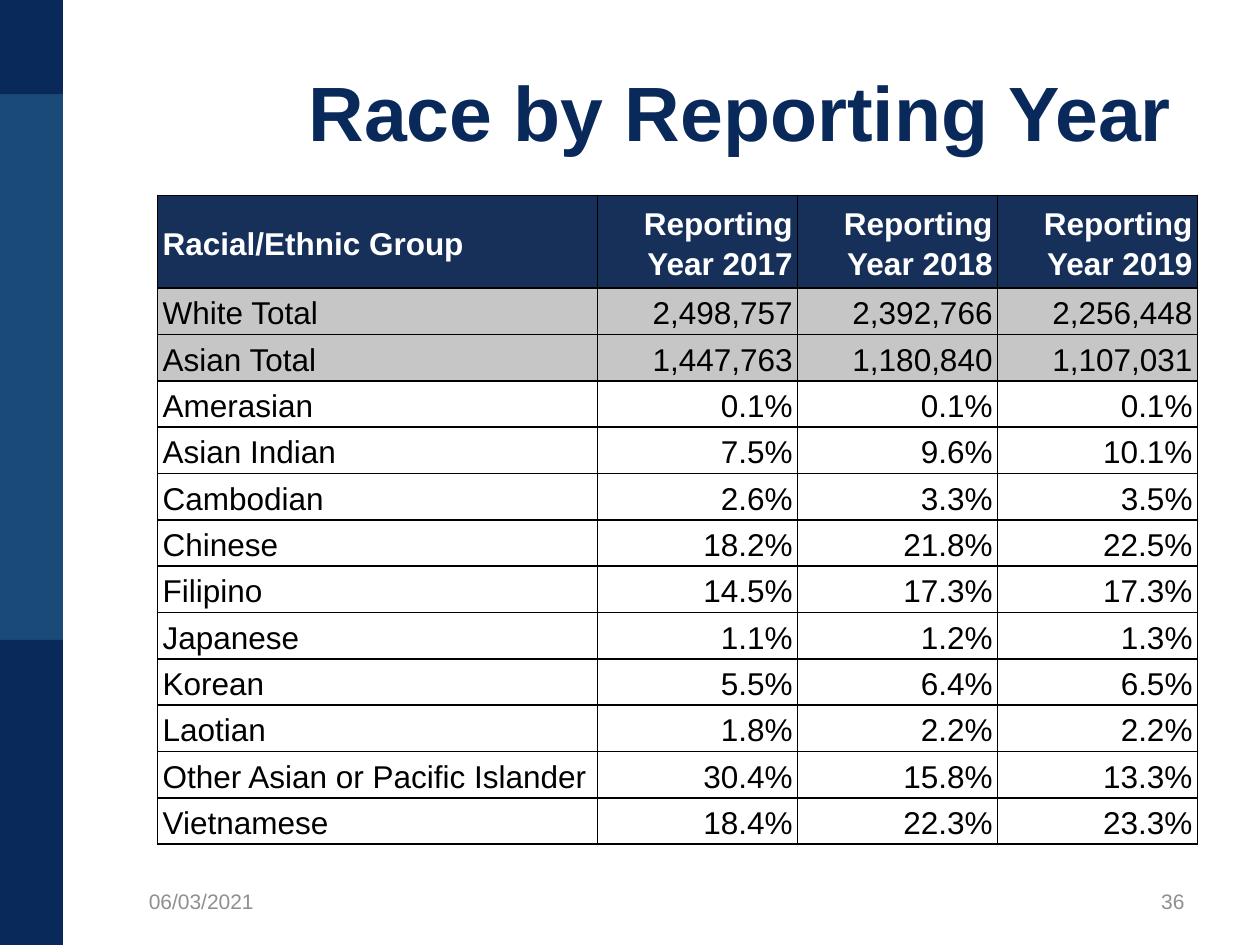
import dataclasses

import pptx
import pptx.util
import pptx.dml.color
import pptx.enum.shapes
import pptx.enum.text
from lxml import etree
from pptx.oxml.ns import qn

Cm = pptx.util.Cm
Pt = pptx.util.Pt
Align = pptx.enum.text.PP_ALIGN
Middle = pptx.enum.text.MSO_ANCHOR.MIDDLE


@dataclasses.dataclass(frozen=True)
class Theme:
    """Colours, font and type sizes of the slide."""
    font: str = "Arial"
    navy: str = "0A295B"
    blue: str = "1A4A78"
    head: str = "17305A"
    total: str = "C6C6C6"
    white: str = "FFFFFF"
    black: str = "000000"
    grey: str = "8F8F8F"
    title: int = 44
    body: int = 18
    small: int = 12


THEME = Theme()

ROWS = [
    ("Racial/Ethnic Group", "Reporting Year 2017", "Reporting Year 2018", "Reporting Year 2019"),
    ("White Total", "2,498,757", "2,392,766", "2,256,448"),
    ("Asian Total", "1,447,763", "1,180,840", "1,107,031"),
    ("Amerasian", "0.1%", "0.1%", "0.1%"),
    ("Asian Indian", "7.5%", "9.6%", "10.1%"),
    ("Cambodian", "2.6%", "3.3%", "3.5%"),
    ("Chinese", "18.2%", "21.8%", "22.5%"),
    ("Filipino", "14.5%", "17.3%", "17.3%"),
    ("Japanese", "1.1%", "1.2%", "1.3%"),
    ("Korean", "5.5%", "6.4%", "6.5%"),
    ("Laotian", "1.8%", "2.2%", "2.2%"),
    ("Other Asian or Pacific Islander", "30.4%", "15.8%", "13.3%"),
    ("Vietnamese", "18.4%", "22.3%", "23.3%"),
]


def tint(code):
    """Turn a hex code into a colour."""
    return pptx.dml.color.RGBColor.from_string(code)


def style(para, size, color, align, bold=False):
    """Set the font and alignment of a paragraph."""
    para.alignment = align
    font = para.font
    font.name = THEME.font
    font.size = Pt(size)
    font.bold = bold
    font.color.rgb = tint(color)


def add_band(slide, left, top, width, height):
    """Draw the side band with its dark ends."""
    parts = [(0, height, THEME.blue), (0, 1.9, THEME.navy), (12.9, height - 12.9, THEME.navy)]
    for drop, tall, color in parts:
        rect = slide.shapes.add_shape(
            pptx.enum.shapes.MSO_SHAPE.RECTANGLE,
            Cm(left), Cm(top + drop), Cm(width), Cm(tall))
        rect.shadow.inherit = False
        rect.fill.solid()
        rect.fill.fore_color.rgb = tint(color)
        rect.line.fill.background()


def add_title(slide, left, top, width, height):
    """Place and format the title."""
    title = slide.shapes.title
    title.left, title.top = Cm(left), Cm(top)
    title.width, title.height = Cm(width), Cm(height)
    frame = title.text_frame
    frame.text = "Race by Reporting Year"
    frame.vertical_anchor = Middle
    style(frame.paragraphs[0], THEME.title, THEME.navy, Align.CENTER, True)


def add_edges(cell):
    """Rule all four sides of a cell."""
    props = cell._tc.get_or_add_tcPr()
    for spot, side in enumerate(("lnL", "lnR", "lnT", "lnB")):
        line = etree.Element(qn("a:" + side), w=str(Pt(1)))
        fill = etree.SubElement(line, qn("a:solidFill"))
        etree.SubElement(fill, qn("a:srgbClr"), val=THEME.black)
        props.insert(spot, line)


def fill_cell(cell, text, row, col):
    """Write and format one cell by its row and column."""
    head = row == 0
    back = THEME.head if head else THEME.total if row < 3 else THEME.white
    cell.fill.solid()
    cell.fill.fore_color.rgb = tint(back)
    cell.margin_left = cell.margin_right = Cm(0.1)
    cell.margin_top = cell.margin_bottom = 0
    cell.vertical_anchor = Middle
    cell.text = text
    para = cell.text_frame.paragraphs[0]
    para.line_spacing = 1.15
    style(para, THEME.body, THEME.white if head else THEME.black,
          Align.RIGHT if col else Align.LEFT, head)
    add_edges(cell)


def add_grid(slide, left, top, width, height):
    """Build the table, with a header two rows tall."""
    count = len(ROWS[0])
    table = slide.shapes.add_table(
        len(ROWS), count, Cm(left), Cm(top), Cm(width), Cm(height)).table
    first = 8.87
    for col, column in enumerate(table.columns):
        column.width = Cm((width - first) / (count - 1) if col else first)
    unit = height / (len(ROWS) + 1)
    for row, texts in enumerate(ROWS):
        table.rows[row].height = Cm(unit if row else 2 * unit)
        for col, text in enumerate(texts):
            fill_cell(table.cell(row, col), text, row, col)


def add_foot(slide, left, top, width, height):
    """Place the date at the left and the page number at the right."""
    wide = 5.93
    parts = [(0, "06/03/2021", Align.LEFT), (width - wide, "36", Align.RIGHT)]
    for shift, text, align in parts:
        box = slide.shapes.add_textbox(Cm(left + shift), Cm(top), Cm(wide), Cm(height))
        frame = box.text_frame
        frame.word_wrap = True
        frame.vertical_anchor = Middle
        frame.text = text
        style(frame.paragraphs[0], THEME.small, THEME.grey, align)


def main():
    """Build the slide and save it."""
    deck = pptx.Presentation()
    deck.slide_width, deck.slide_height = Cm(25.4), Cm(19.05)
    slide = deck.slides.add_slide(deck.slide_layouts[5])
    add_band(slide, 0, 0, 1.27, 19.05)
    add_title(slide, 5.08, 0.64, 19.69, 3.18)
    add_grid(slide, 3.18, 3.94, 20.96, 13.08)
    add_foot(slide, 2.75, 17.66, 21.38, 1.01)
    deck.save("out.pptx")


if __name__ == "__main__":
    main()
